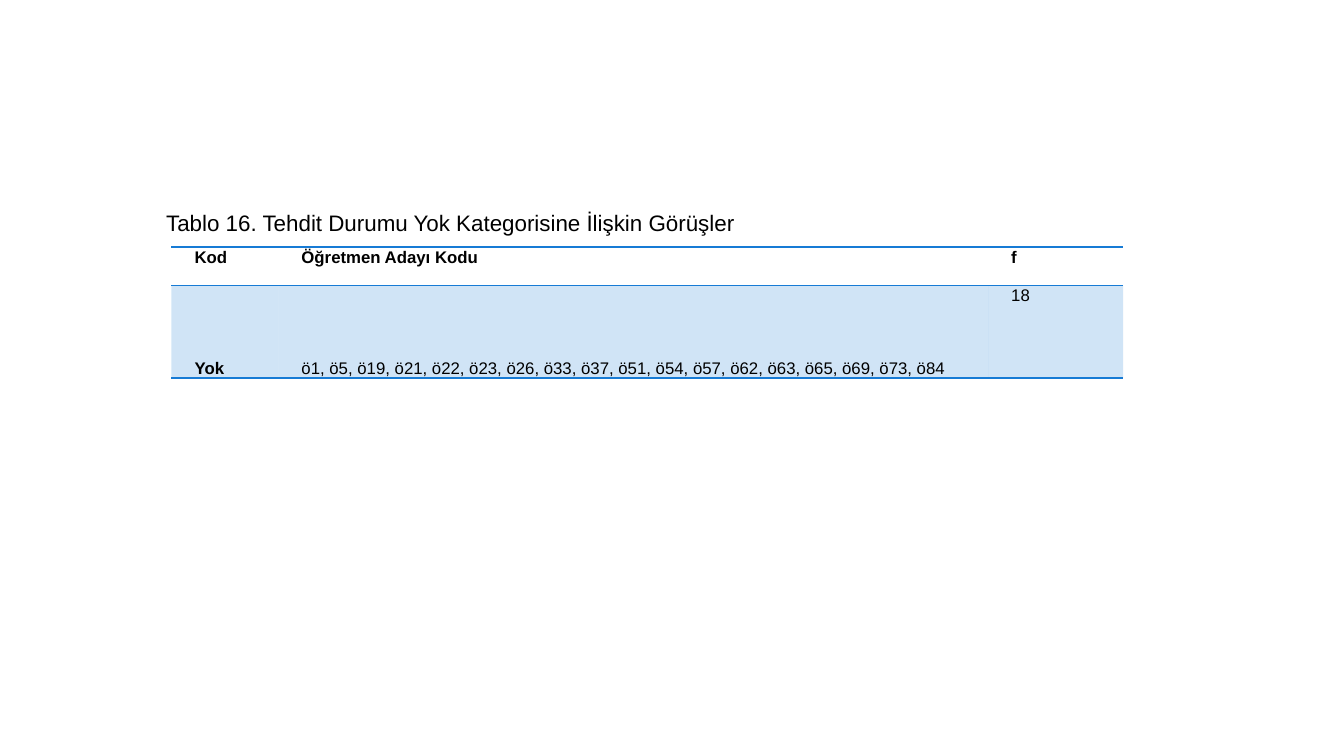
from dataclasses import dataclass

from lxml.etree import SubElement
from pptx import Presentation
from pptx.dml.color import RGBColor
from pptx.enum.shapes import MSO_SHAPE
from pptx.enum.text import MSO_ANCHOR, PP_ALIGN
from pptx.oxml import parse_xml
from pptx.oxml.ns import nsdecls, qn
from pptx.slide import Slide
from pptx.table import _Cell
from pptx.text.text import TextFrame
from pptx.util import Inches, Pt


@dataclass(frozen=True)
class Theme:
    """Colours and type sizes of the slide."""
    font: str = "Arial"
    ink: str = "000000"
    paper: str = "FFFFFF"
    accent: str = "177BD5"
    band_opacity: int = 20
    caption_size: int = 16
    table_size: int = 12
    rule_width: int = 1


@dataclass(frozen=True)
class Entry:
    """One cell of the table."""
    text: str
    bold: bool = False
    anchor: MSO_ANCHOR = MSO_ANCHOR.TOP


THEME = Theme()
SLIDE_WIDTH, SLIDE_HEIGHT = Inches(13.33), Inches(7.5)
COLUMN_WIDTHS = (1.06, 7.04, 1.34)
ROW_HEIGHTS = (0.38, 0.92)
CODES = "ö1, ö5, ö19, ö21, ö22, ö23, ö26, ö33, ö37, ö51, ö54, ö57, ö62, ö63, ö65, ö69, ö73, ö84"
ROWS = (
    (Entry("Kod", True), Entry("Öğretmen Adayı Kodu", True), Entry("f", True)),
    (Entry("Yok", True, MSO_ANCHOR.BOTTOM), Entry(CODES, anchor=MSO_ANCHOR.BOTTOM), Entry("18")),
)


def write_text(frame: TextFrame, text: str, *, size: int, bold: bool = False,
               align: PP_ALIGN = PP_ALIGN.LEFT, line_spacing: float = 1.0,
               space_after: int = 0) -> None:
    """Write one formatted paragraph into a text frame."""
    frame.word_wrap = True
    para = frame.paragraphs[0]
    para.alignment = align
    para.line_spacing = line_spacing
    para.space_after = Pt(space_after)
    span = para.add_run()
    span.text = text
    span.font.name = THEME.font
    span.font.size = Pt(size)
    span.font.bold = bold
    span.font.color.rgb = RGBColor.from_string(THEME.ink)


def rule_cell(cell: _Cell, ruled_sides: str) -> None:
    """Draw rules on the given sides of a cell and clear the others."""
    properties = cell._tc.get_or_add_tcPr()
    for index, side in enumerate("LRTB"):
        paint = "<a:noFill/>"
        if side in ruled_sides:
            paint = f'<a:solidFill><a:srgbClr val="{THEME.accent}"/></a:solidFill>'
        width = Pt(THEME.rule_width)
        line = parse_xml(f'<a:ln{side} {nsdecls("a")} w="{width}">{paint}</a:ln{side}>')
        properties.insert(index, line)


def tint_cell(cell: _Cell) -> None:
    """Fill a cell with the translucent accent colour."""
    cell.fill.solid()
    cell.fill.fore_color.rgb = RGBColor.from_string(THEME.accent)
    colour = cell._tc.get_or_add_tcPr().find(".//" + qn("a:srgbClr"))
    SubElement(colour, qn("a:alpha")).set("val", str(THEME.band_opacity * 1000))


def draw_cell(cell: _Cell, entry: Entry, is_header: bool) -> None:
    """Write and style one table cell."""
    cell.margin_left = cell.margin_right = Inches(0.23)
    cell.margin_top = cell.margin_bottom = Inches(0)
    cell.vertical_anchor = entry.anchor
    write_text(cell.text_frame, entry.text, size=THEME.table_size, bold=entry.bold,
               align=PP_ALIGN.JUSTIFY, line_spacing=1.07, space_after=8)
    if is_header:
        cell.fill.background()
    else:
        tint_cell(cell)
    rule_cell(cell, "TB")


def draw_backdrop(page: Slide) -> None:
    """Draw the plain panel behind the content."""
    panel = page.shapes.add_shape(MSO_SHAPE.RECTANGLE, 0, 0, SLIDE_WIDTH, SLIDE_HEIGHT)
    panel.shadow.inherit = False
    panel.fill.solid()
    panel.fill.fore_color.rgb = RGBColor.from_string(THEME.paper)
    panel.line.fill.background()


def draw_table(page: Slide) -> None:
    """Draw the table of opinions."""
    table = page.shapes.add_table(
        len(ROWS), len(COLUMN_WIDTHS), Inches(1.7), Inches(2.45),
        Inches(sum(COLUMN_WIDTHS)), Inches(sum(ROW_HEIGHTS))).table
    table.horz_banding = False
    for column, width in zip(table.columns, COLUMN_WIDTHS):
        column.width = Inches(width)
    for row, height in zip(table.rows, ROW_HEIGHTS):
        row.height = Inches(height)
    for row_index, entries in enumerate(ROWS):
        for column_index, entry in enumerate(entries):
            draw_cell(table.cell(row_index, column_index), entry, row_index == 0)


def draw_caption(page: Slide) -> None:
    """Draw the caption above the table."""
    box = page.shapes.add_textbox(Inches(1.55), Inches(2.03), Inches(9), Inches(0.37))
    write_text(box.text_frame, "Tablo 16. Tehdit Durumu Yok Kategorisine İlişkin Görüşler",
               size=THEME.caption_size)


def main() -> None:
    """Build and save the deck."""
    deck = Presentation()
    deck.slide_width, deck.slide_height = SLIDE_WIDTH, SLIDE_HEIGHT
    page = deck.slides.add_slide(deck.slide_layouts[6])
    draw_backdrop(page)
    draw_table(page)
    draw_caption(page)
    deck.save("out.pptx")


if __name__ == "__main__":
    main()
